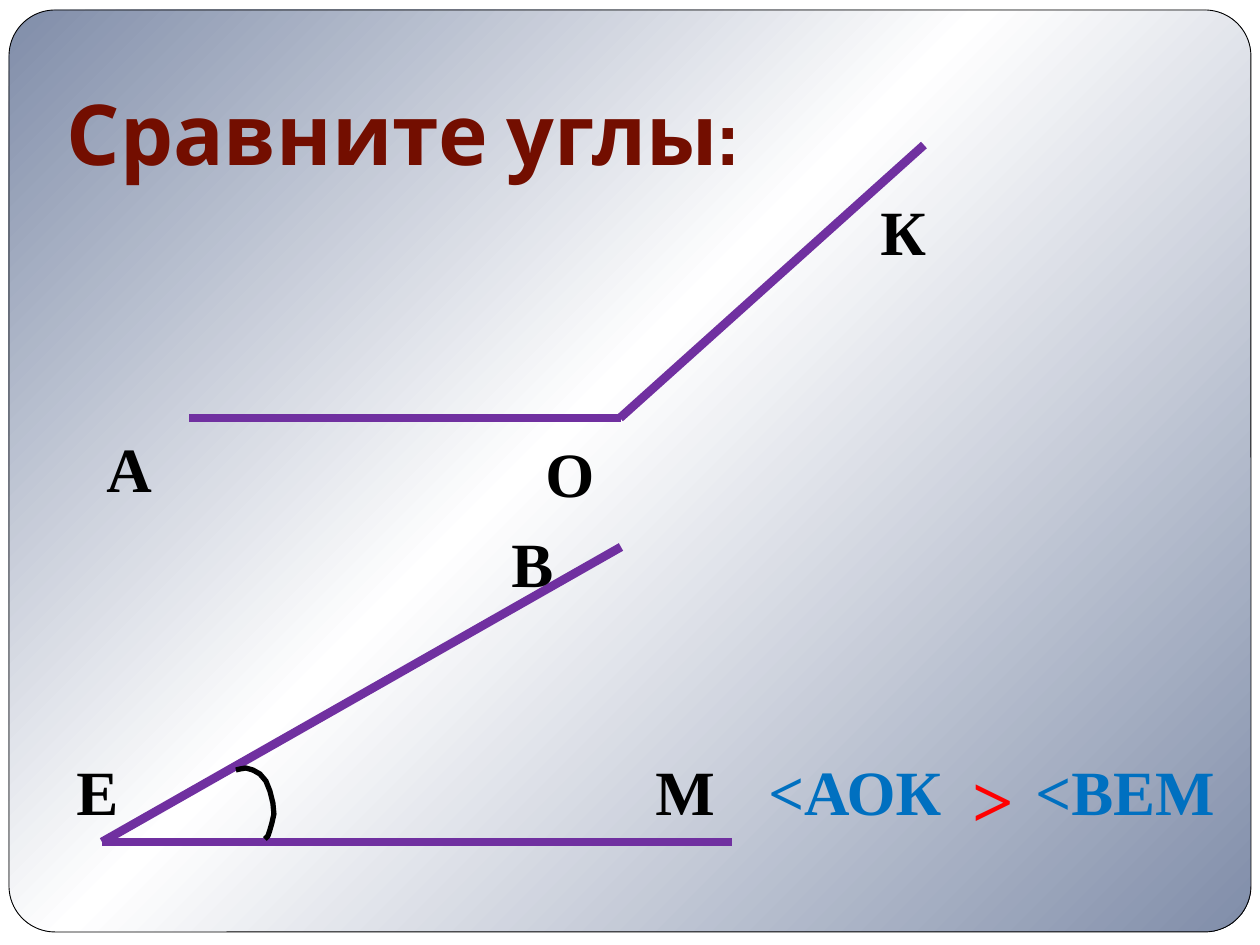
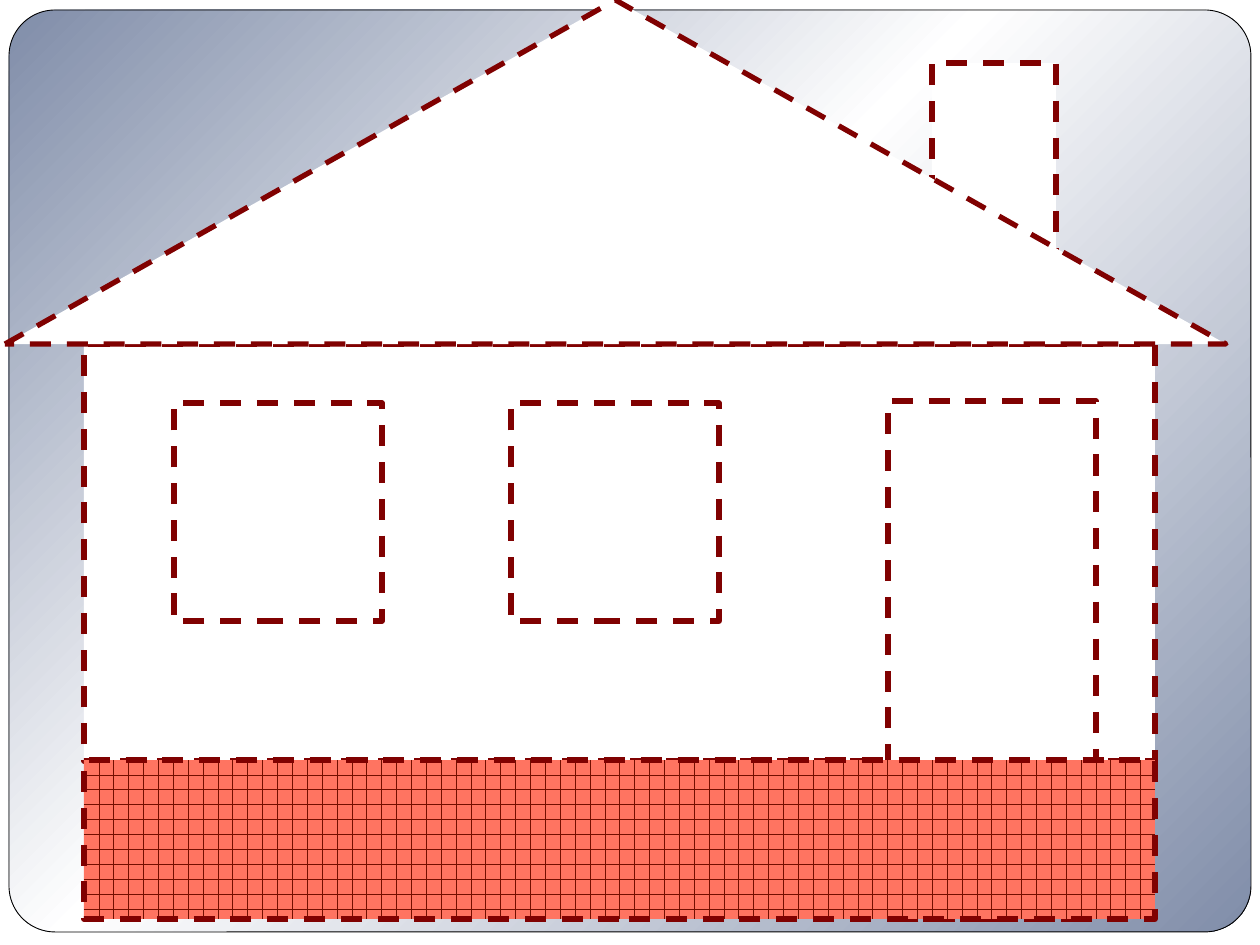
from copy import deepcopy

from lxml.etree import SubElement
from pptx import Presentation
from pptx.dml.color import RGBColor
from pptx.enum.dml import MSO_LINE, MSO_PATTERN
from pptx.enum.shapes import MSO_CONNECTOR, MSO_SHAPE
from pptx.enum.text import MSO_ANCHOR, PP_ALIGN
from pptx.oxml.ns import qn
from pptx.util import Emu, Pt

SLIDE_SIZE = (1260, 945)
EMU_PER_PX = 914400 / 126

WHITE, BLACK, STEEL = "FFFFFF", "000000", "808DA9"
MAROON, PURPLE, BLUE, RED = "730E00", "7030A0", "0070C0", "FF0000"
OUTLINE, BRICK = "800101", "FF7461"
TITLE_FONT, TEXT_FONT = "Cabin", "Times New Roman"

PANEL = (9, 10, 1242, 922)
PANEL_STOPS = [(0, STEEL), (45, WHITE), (100, STEEL)]

TITLE = "Сравните углы:"
TITLE_BOX = (54, 37, 1071, 158)
ANGLE_ARMS = [
    ((189, 418), (621, 418)),
    ((924, 145), (620, 418)),
    ((732, 842), (102, 842)),
    ((621, 547), (102, 842)),
]
ANGLE_MARK = [(236, 770), (240, 769), (246, 768), (253, 770), (260, 774),
              (266, 781), (270, 791), (273, 803), (274, 814), (272, 823),
              (270, 830), (268, 836), (265, 839)]
POINT_LABELS = [("К", 868, 186), ("О", 533, 428), ("А", 94, 423),
                ("В", 499, 518), ("М", 643, 746), ("Е", 64, 746)]
LABEL_SIZE = (110, 89)
ANSWER_BOX = (756, 683, 534, 190)
# text, size, colour, baseline shift in thousandths of a percent
ANSWER = [("<АОК", 36, BLUE, 0), (" ", 72, BLUE, 0), (">", 72, RED, -10000),
          (" ", 48, BLUE, 0), ("<ВЕМ", 36, BLUE, 0)]

WINDOW_TOP, WINDOW_SIZE = 403, (208, 218)
HOUSE_PARTS = [
    ("chimney", MSO_SHAPE.RECTANGLE, (932, 63, 124, 218)),
    ("wall", MSO_SHAPE.RECTANGLE, (84, 344, 1071, 417)),
    ("roof", MSO_SHAPE.ISOSCELES_TRIANGLE, (5, 0, 1221, 344)),
    *[("window", MSO_SHAPE.RECTANGLE, (left, WINDOW_TOP, *WINDOW_SIZE))
      for left in (174, 511)],
    ("door", MSO_SHAPE.RECTANGLE, (888, 401, 208, 518)),
    ("foundation", MSO_SHAPE.RECTANGLE, (84, 760, 1071, 159)),
]


def px(*lengths):
    return [Emu(round(length * EMU_PER_PX)) for length in lengths]


def rgb(code):
    return RGBColor.from_string(code)


def set_line(shape, color, width):
    shape.line.color.rgb = rgb(color)
    shape.line.width = Pt(width)


def add_run(paragraph, text, size, color, font=TEXT_FONT):
    run = paragraph.add_run()
    run.text = text
    run.font.name = font
    run.font.size = Pt(size)
    run.font.bold = True
    run.font.color.rgb = rgb(color)
    return run


def add_text_box(slide, box):
    frame = slide.shapes.add_textbox(*px(*box)).text_frame
    frame.word_wrap = True
    return frame.paragraphs[0]


def dress_master(prs, slide):
    """Give the master a white ground and the gradient panel behind all slides."""
    master = prs.slide_master
    master.background.fill.solid()
    master.background.fill.fore_color.rgb = rgb(WHITE)

    panel = slide.shapes.add_shape(MSO_SHAPE.ROUNDED_RECTANGLE, *px(*PANEL))
    panel.adjustments[0] = 0.05
    panel.shadow.inherit = False
    set_line(panel, BLACK, 0.5)
    panel.fill.gradient()
    panel.fill.gradient_angle = 315
    stop_list = panel._element.spPr.find(qn("a:gradFill")).find(qn("a:gsLst"))
    stop_list.append(deepcopy(stop_list[-1]))
    for stop, (position, color) in zip(panel.fill.gradient_stops, PANEL_STOPS):
        stop.position = position / 100
        stop.color.rgb = rgb(color)
    master.shapes._spTree.insert(2, panel._element)


def add_title(slide):
    title = slide.shapes.title
    title.left, title.top, title.width, title.height = px(*TITLE_BOX)
    frame = title.text_frame
    frame.word_wrap = True
    frame.vertical_anchor = MSO_ANCHOR.BOTTOM
    frame.margin_bottom = px(13)[0]
    frame.paragraphs[0].alignment = PP_ALIGN.LEFT
    add_run(frame.paragraphs[0], TITLE, 48, MAROON, TITLE_FONT)


def build_angles(slide):
    add_title(slide)

    answer = add_text_box(slide, ANSWER_BOX)
    for text, size, color, shift in ANSWER:
        run = add_run(answer, text, size, color)
        if shift:
            run.font._element.set("baseline", str(shift))

    for start, end in ANGLE_ARMS:
        arm = slide.shapes.add_connector(MSO_CONNECTOR.STRAIGHT, *px(*start, *end))
        set_line(arm, PURPLE, 5)
        SubElement(arm._element.spPr, qn("a:effectLst"))

    outline = slide.shapes.build_freeform(*ANGLE_MARK[0], scale=EMU_PER_PX)
    outline.add_line_segments(ANGLE_MARK[1:], close=False)
    mark = outline.convert_to_shape()
    mark.shadow.inherit = False
    mark.fill.background()
    set_line(mark, BLACK, 3)

    for letter, left, top in POINT_LABELS:
        add_run(add_text_box(slide, (left, top, *LABEL_SIZE)), letter, 36, BLACK)


def build_house(slide):
    for part, preset, box in HOUSE_PARTS:
        shape = slide.shapes.add_shape(preset, *px(*box))
        shape.shadow.inherit = False
        set_line(shape, OUTLINE, 3)
        shape.line.dash_style = MSO_LINE.DASH
        if part == "foundation":
            shape.fill.patterned()
            shape.fill.pattern = MSO_PATTERN.HORIZONTAL_BRICK
            shape.fill.fore_color.rgb = rgb(MAROON)
            shape.fill.back_color.rgb = rgb(BRICK)
        else:
            shape.fill.solid()
            shape.fill.fore_color.rgb = rgb(WHITE)


def main():
    prs = Presentation()
    prs.slide_width, prs.slide_height = px(*SLIDE_SIZE)
    title_only, blank = prs.slide_layouts[5], prs.slide_layouts[6]

    angles = prs.slides.add_slide(title_only)
    dress_master(prs, angles)
    build_angles(angles)
    build_house(prs.slides.add_slide(blank))

    prs.save("out.pptx")


if __name__ == "__main__":
    main()
